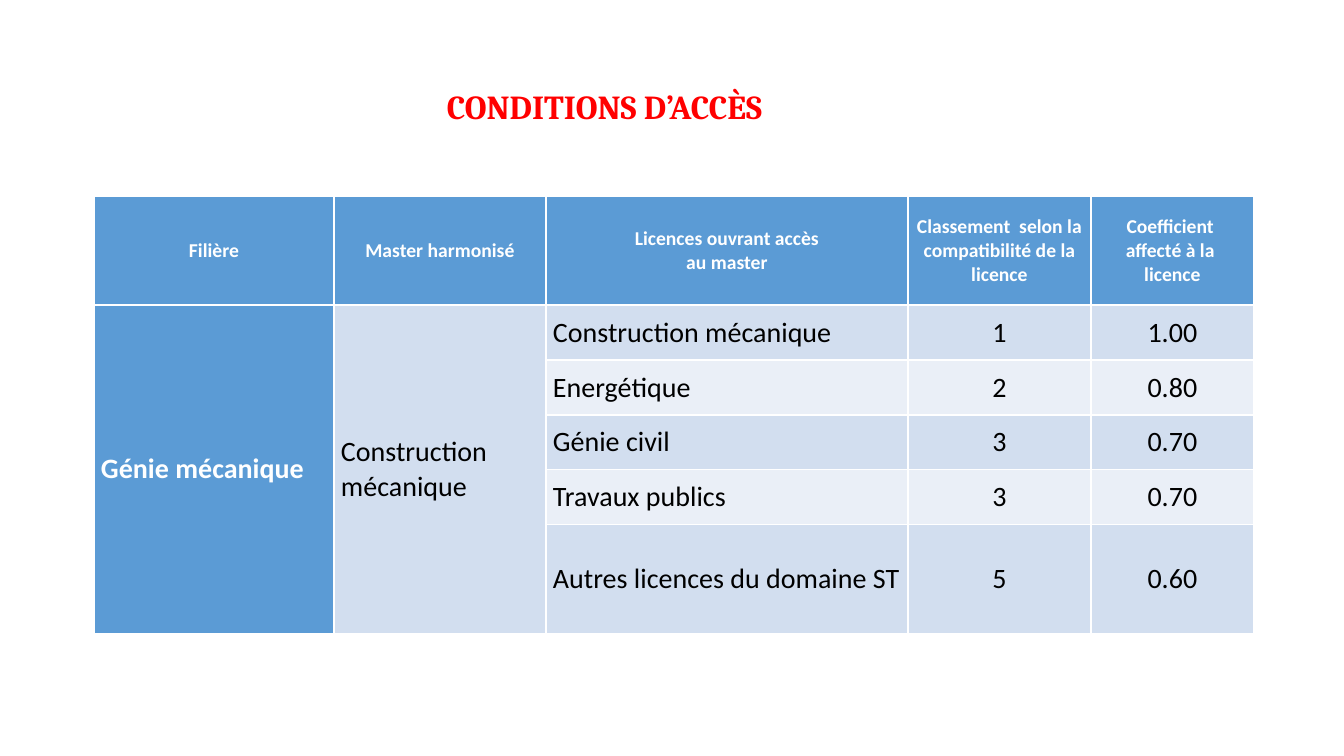
import pptx
import pptx.dml.color
import pptx.enum.text
import pptx.util

RGBColor = pptx.dml.color.RGBColor
ALIGN = pptx.enum.text.PP_ALIGN
ANCHOR = pptx.enum.text.MSO_ANCHOR

RED = RGBColor(0xFF, 0x00, 0x00)
WHITE = RGBColor(0xFF, 0xFF, 0xFF)
BLACK = RGBColor(0x00, 0x00, 0x00)
BLUE = RGBColor(0x5B, 0x9B, 0xD5)
BANDS = (RGBColor(0xD2, 0xDE, 0xEF), RGBColor(0xEA, 0xEF, 0xF7))

TITLE = "CONDITIONS D’ACCÈS"
HEADERS = (
    "Filière",
    "Master harmonisé",
    "Licences ouvrant accès\nau master",
    "Classement  selon la compatibilité de la licence",
    "Coefficient  affecté à la  licence",
)
FIELD = "Génie mécanique"
MASTER = "Construction mécanique"
LICENCES = (
    ("Construction mécanique", "1", "1.00"),
    ("Energétique", "2", "0.80"),
    ("Génie civil", "3", "0.70"),
    ("Travaux publics", "3", "0.70"),
    ("Autres licences du domaine ST", "5", "0.60"),
)

SLIDE_SIZE = (1344, 756)
TITLE_BOX = (419, 81, 371, 50)
TITLE_INDENT = 25
TABLE_CORNER = (94, 196)
COLUMN_WIDTHS = (240, 212, 362, 183, 163)
ROW_HEIGHTS = (109, 55, 55, 55, 55, 109)
CELL_INSET = 7

TITLE_FONT = {"name": "Cambria", "size": pptx.util.Pt(24), "bold": True}
HEADER_FONT = {"name": "Calibri", "size": pptx.util.Pt(14), "bold": True}
FIELD_FONT = {"name": "Calibri", "size": pptx.util.Pt(20), "bold": True}
BODY_FONT = {"name": "Calibri", "size": pptx.util.Pt(20), "bold": False}


def px(length):
    return pptx.util.Emu(round(length * 914400 / 100.8))


def set_all(target, values):
    for name, value in values.items():
        setattr(target, name, value)


def format_text(frame, font, color, align):
    for para in frame.paragraphs:
        para.alignment = align
        for span in para.runs:
            set_all(span.font, font)
            span.font.color.rgb = color


def fill_cell(cell, text, fill, font, color, align):
    cell.text = text
    cell.fill.solid()
    cell.fill.fore_color.rgb = fill
    set_all(cell, {
        "vertical_anchor": ANCHOR.MIDDLE,
        "margin_left": px(CELL_INSET), "margin_right": px(CELL_INSET),
        "margin_top": 0, "margin_bottom": 0,
    })
    format_text(cell.text_frame, font, color, align)


def add_title(page):
    box = page.shapes.title
    set_all(box, dict(zip(("left", "top", "width", "height"), map(px, TITLE_BOX))))
    frame = box.text_frame
    frame.text = TITLE
    set_all(frame, {
        "word_wrap": False,
        "auto_size": pptx.enum.text.MSO_AUTO_SIZE.SHAPE_TO_FIT_TEXT,
        "vertical_anchor": ANCHOR.TOP,
    })
    format_text(frame, TITLE_FONT, RED, ALIGN.CENTER)
    properties = frame.paragraphs[0]._p.get_or_add_pPr()
    properties.set("marL", str(px(TITLE_INDENT)))
    properties.set("indent", str(px(-TITLE_INDENT)))


def add_access_table(page):
    size = (sum(COLUMN_WIDTHS), sum(ROW_HEIGHTS))
    table = page.shapes.add_table(
        len(ROW_HEIGHTS), len(COLUMN_WIDTHS), *map(px, TABLE_CORNER + size)
    ).table
    table.first_col = True
    for column, width in zip(table.columns, COLUMN_WIDTHS):
        column.width = px(width)
    for row, height in zip(table.rows, ROW_HEIGHTS):
        row.height = px(height)

    for col, header in enumerate(HEADERS):
        fill_cell(table.cell(0, col), header, BLUE, HEADER_FONT, WHITE, ALIGN.CENTER)
    for col in (0, 1):
        table.cell(1, col).merge(table.cell(len(LICENCES), col))
    fill_cell(table.cell(1, 0), FIELD, BLUE, FIELD_FONT, WHITE, ALIGN.LEFT)
    fill_cell(table.cell(1, 1), MASTER, BANDS[0], BODY_FONT, BLACK, ALIGN.LEFT)
    for index, licence in enumerate(LICENCES):
        for col, text in enumerate(licence, start=2):
            align = ALIGN.LEFT if col == 2 else ALIGN.CENTER
            fill_cell(table.cell(index + 1, col), text, BANDS[index % 2],
                      BODY_FONT, BLACK, align)


def main():
    deck = pptx.Presentation()
    deck.slide_width, deck.slide_height = map(px, SLIDE_SIZE)
    title_only = deck.slide_layouts[5]
    page = deck.slides.add_slide(title_only)
    add_title(page)
    add_access_table(page)
    deck.save("out.pptx")


if __name__ == "__main__":
    main()
